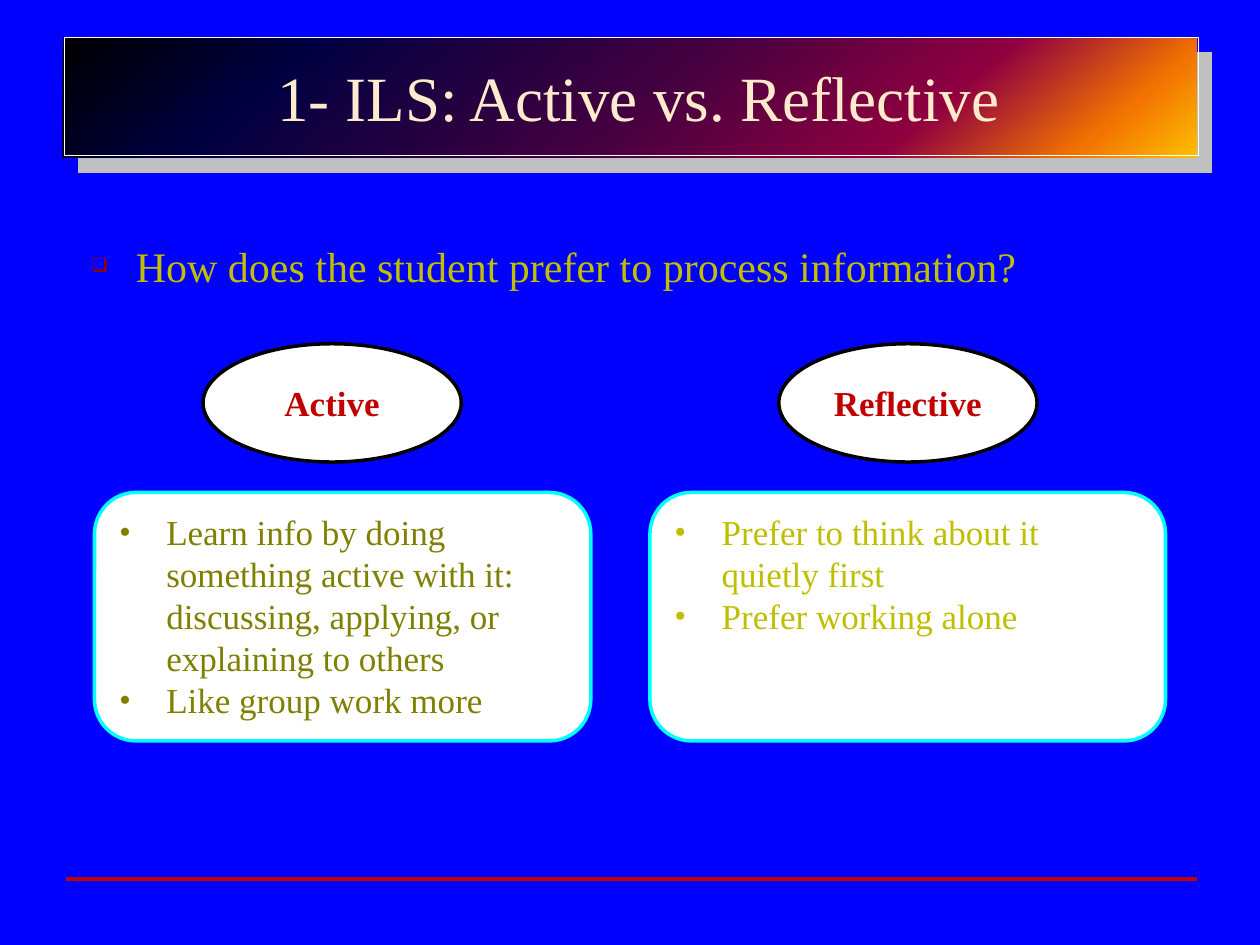
from lxml import etree
from pptx import Presentation
from pptx.dml.color import RGBColor
from pptx.enum.shapes import MSO_CONNECTOR, MSO_SHAPE
from pptx.enum.text import MSO_ANCHOR, PP_ALIGN
from pptx.oxml import parse_xml
from pptx.oxml.ns import qn
from pptx.util import Pt

RECTANGLE = MSO_SHAPE.RECTANGLE
OVAL = MSO_SHAPE.OVAL
ROUNDED = MSO_SHAPE.FLOWCHART_ALTERNATE_PROCESS
STRAIGHT = MSO_CONNECTOR.STRAIGHT
TOP, MIDDLE = MSO_ANCHOR.TOP, MSO_ANCHOR.MIDDLE
LEFT, CENTER = PP_ALIGN.LEFT, PP_ALIGN.CENTER
FONT = "Times New Roman"
NAMESPACE = 'xmlns:a="http://schemas.openxmlformats.org/drawingml/2006/main"'
BANNER_STOPS = [(0, "000000"), (20, "000040"), (50, "400040"),
                (75, "8F0040"), (90, "F27300"), (100, "FFBF00")]


def color(value):
    """Return the colour for a hex string."""
    return RGBColor.from_string(value)


def add_panel(page, kind, box, fill=None, line=None, width=2):
    """Add a preset shape without shadow, with optional fill and outline."""
    shape = page.shapes.add_shape(kind, *map(Pt, box))
    shape.shadow.inherit = False
    if fill:
        shape.fill.solid()
        shape.fill.fore_color.rgb = color(fill)
    else:
        shape.fill.background()
    if line:
        shape.line.color.rgb = color(line)
        shape.line.width = Pt(width)
    else:
        shape.line.fill.background()
    return shape


def write(shape, lines, size, ink, align=LEFT, anchor=TOP, wrap=True, bold=False, before=0):
    """Write paragraphs into a shape and return them."""
    frame = shape.text_frame
    frame.word_wrap = wrap
    frame.vertical_anchor = anchor
    frame.text = "\n".join(lines)
    for para in frame.paragraphs:
        para.alignment = align
        para.space_before = Pt(before)
        para.font.name = FONT
        para.font.size = Pt(size)
        para.font.bold = bold
        para.font.color.rgb = color(ink)
    return frame.paragraphs


def set_indent(para, margin, first=0):
    """Set the left margin and first-line indent of a paragraph."""
    properties = para._p.get_or_add_pPr()
    properties.set("marL", str(Pt(margin)))
    properties.set("indent", str(Pt(first)))
    return properties


def add_bullet(para, mark, percent, margin, hanging, ink):
    """Give a paragraph a hanging bullet."""
    properties = set_indent(para, margin, -hanging)
    parts = [f'<a:buClr {NAMESPACE}><a:srgbClr val="{ink}"/></a:buClr>',
             f'<a:buSzPct {NAMESPACE} val="{percent * 1000}"/>',
             f'<a:buFont {NAMESPACE} typeface="{FONT}"/>',
             f'<a:buChar {NAMESPACE} char="{mark}"/>']
    position = properties.index(properties.find(qn("a:defRPr")))
    for offset, part in enumerate(parts):
        properties.insert(position + offset, parse_xml(part))


def add_banner(page, left, top, width, height):
    """Add the gradient banner with its grey shadow."""
    banner = add_panel(page, RECTANGLE, (left, top, width, height))
    stops = "".join(f'<a:gs pos="{place * 1000}"><a:srgbClr val="{ink}"/></a:gs>'
                    for place, ink in BANNER_STOPS)
    gradient = parse_xml(f'<a:gradFill {NAMESPACE} rotWithShape="1"><a:gsLst>{stops}</a:gsLst>'
                         '<a:lin ang="3000000" scaled="0"/></a:gradFill>')
    properties = banner._element.spPr
    properties.replace(properties.find(qn("a:noFill")), gradient)
    shadow = parse_xml(f'<a:outerShdw {NAMESPACE} dist="{Pt(12.2)}" dir="2700000" algn="ctr" '
                       'rotWithShape="0"><a:srgbClr val="C0C0C0"/></a:outerShdw>')
    properties.find(qn("a:effectLst")).append(shadow)


def add_rule(page, left, top, width):
    """Add the red rule at the foot of the page."""
    rule = page.shapes.add_connector(STRAIGHT, Pt(left), Pt(top), Pt(left + width), Pt(top))
    rule.line.color.rgb = color("C00000")
    rule.line.width = Pt(2.25)
    etree.SubElement(rule._element.spPr, qn("a:effectLst"))


def add_question(page, left, top, width, height, question):
    """Add the body area with its bulleted question."""
    body = add_panel(page, RECTANGLE, (left, top, width, height), "0000FF")
    para, = write(body, [question], 24, "BFBF00", before=4.8)
    add_bullet(para, "❑", 50, 33.8, 25.2, "920000")


def add_title(page, left, top, width, height, title):
    """Add the outlined title over the banner."""
    shape = add_panel(page, RECTANGLE, (left, top, width, height), line="FFFFFF", width=0.5)
    para, = write(shape, [title], 36, "FFEBCC", CENTER, MIDDLE, wrap=False, before=7.2)
    set_indent(para, 8.6)


def add_style(page, left, top, width, height, oval_left, name, traits, ink):
    """Add a learning style: a named oval above a card of traits."""
    oval = add_panel(page, OVAL, (left + oval_left, top, 147.6, 67.6), "FFFFFF", "000000")
    write(oval, [name], 20, "C00000", CENTER, MIDDLE, wrap=False, bold=True)
    card_top = 85
    card = add_panel(page, ROUNDED, (left, top + card_top, width, height - card_top),
                     "FFFFFF", "00FFFF")
    for para in write(card, traits, 20, ink):
        add_bullet(para, "•", 97, 27, 27, ink)


def main():
    """Build the slide and save it."""
    deck = Presentation()
    deck.slide_width, deck.slide_height = Pt(720), Pt(540)
    page = deck.slides.add_slide(deck.slide_layouts[6])
    page.background.fill.solid()
    page.background.fill.fore_color.rgb = color("0000FF")
    add_banner(page, 36, 21.6, 648, 68.4)
    add_rule(page, 37.5, 502.4, 646.5)
    add_question(page, 36.7, 133.9, 646.6, 351.4,
                 "How does the student prefer to process information?")
    add_title(page, 36.7, 21.6, 648, 67, "1- ILS: Active vs. Reflective")
    add_style(page, 54, 196.4, 283.6, 227, 62, "Active",
              ["Learn info by doing something active with it: discussing, applying, "
               "or explaining to others", "Like group work more"], "7F8000")
    add_style(page, 371.4, 196.4, 294.6, 227, 73.6, "Reflective",
              ["Prefer to think about it quietly first", "Prefer working alone"], "BFBF00")
    deck.save("out.pptx")


if __name__ == "__main__":
    main()
